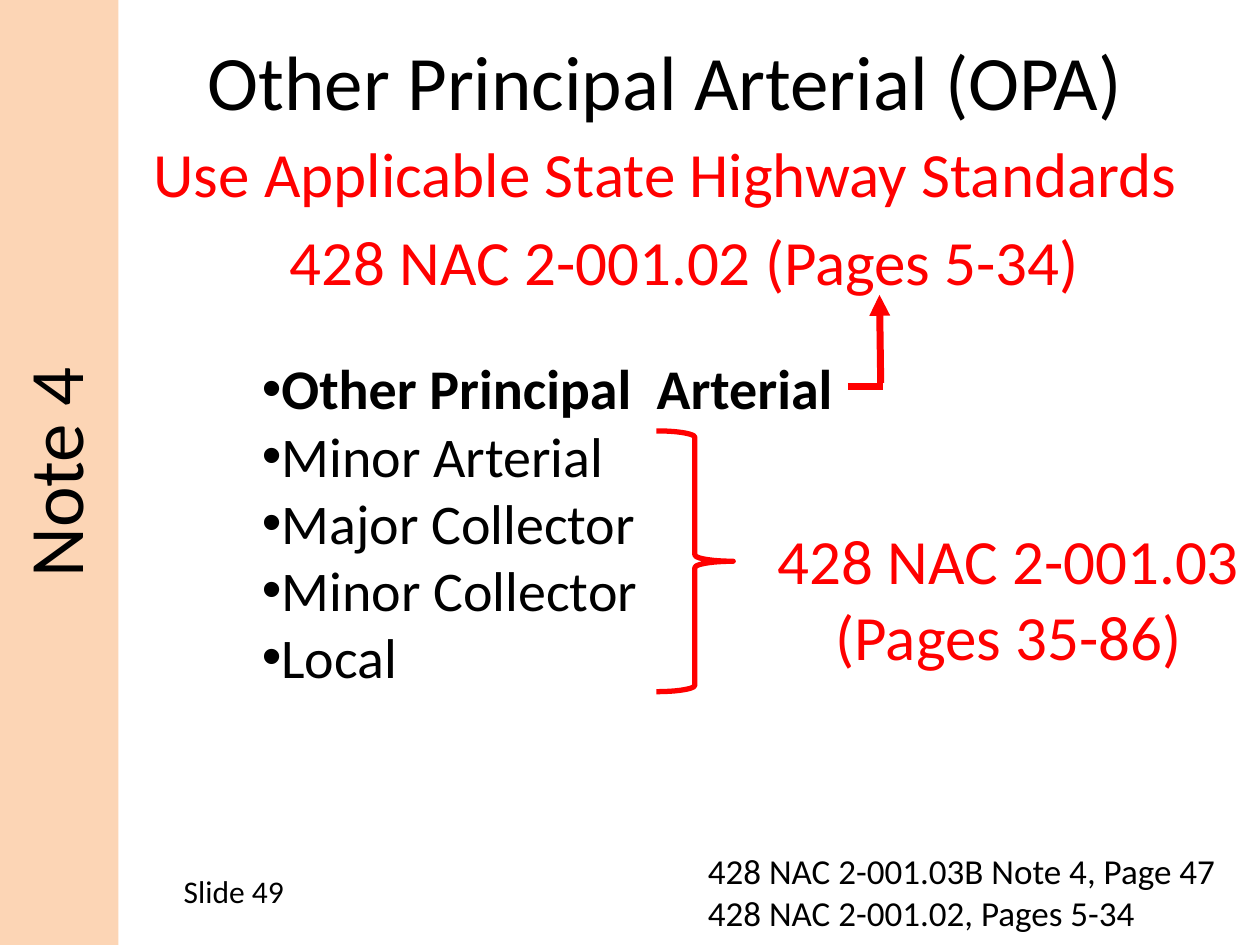
from lxml.etree import SubElement
from pptx import Presentation
from pptx.dml.color import RGBColor
from pptx.enum.shapes import MSO_CONNECTOR, MSO_SHAPE
from pptx.enum.text import MSO_ANCHOR, PP_ALIGN
from pptx.oxml.ns import qn
from pptx.util import Inches, Pt

BLACK = RGBColor(0x00, 0x00, 0x00)
RED = RGBColor(0xFF, 0x00, 0x00)
PEACH = RGBColor(0xFC, 0xD5, 0xB5)
LEFT, CENTER = PP_ALIGN.LEFT, PP_ALIGN.CENTER


def write_lines(frame, lines, size, color, align=LEFT, space_before=0):
    frame.word_wrap = True
    for index, line in enumerate(lines):
        paragraph = frame.paragraphs[0] if index == 0 else frame.add_paragraph()
        paragraph.alignment = align
        paragraph.space_before = Pt(space_before)
        run = paragraph.add_run()
        run.text = line
        run.font.name = "Calibri"
        run.font.size = Pt(size)
        run.font.color.rgb = color
    return frame.paragraphs


def add_text(box, lines, size, color, align=LEFT, space_before=0):
    text_box = slide.shapes.add_textbox(*map(Inches, box))
    return write_lines(text_box.text_frame, lines, size, color, align, space_before)


presentation = Presentation()
presentation.slide_width = Inches(10)
presentation.slide_height = Inches(7.5)
slide = presentation.slides.add_slide(presentation.slide_layouts[5])

title = slide.shapes.title
title.left, title.top = Inches(0.94), Inches(0)
title.width, title.height = Inches(8.82), Inches(1.26)
title.text_frame.vertical_anchor = MSO_ANCHOR.MIDDLE
write_lines(title.text_frame, ["Other Principal Arterial (OPA) "], 44, BLACK, CENTER)

subtitle = add_text(
    (1.12, 1.02, 8.63, 1.44),
    ["Use Applicable State Highway Standards", "428 NAC 2-001.02 (Pages 5-34)"],
    36, RED, space_before=7.2,
)
subtitle[1].alignment = CENTER

add_text(
    (5.52, 6.69, 4.48, 0.77),
    ["428 NAC 2-001.03B Note 4, Page 47", "428 NAC 2-001.02, Pages 5-34"],
    20, BLACK,
)

side_band = slide.shapes.add_shape(
    MSO_SHAPE.RECTANGLE, Inches(0), Inches(0), Inches(0.94), Inches(7.5)
)
side_band.shadow.inherit = False
side_band.fill.solid()
side_band.fill.fore_color.rgb = PEACH
side_band.line.fill.background()
write_lines(side_band.text_frame, ["Note 4"], 44, BLACK, CENTER)
side_band.text_frame.vertical_anchor = MSO_ANCHOR.TOP
side_band.text_frame._txBody.bodyPr.set("vert", "vert270")

add_text((1.36, 6.87, 1.24, 0.4), ["Slide 49"], 18, BLACK)

road_classes = add_text(
    (1.98, 2.76, 4.99, 2.79),
    ["Other Principal  Arterial", "Minor Arterial", "Major Collector",
     "Minor Collector", "Local"],
    32, BLACK,
)
road_classes[0].runs[0].font.bold = True
for paragraph in road_classes:
    properties = paragraph._p.get_or_add_pPr()
    SubElement(properties, qn("a:buFont"), typeface="Arial")
    SubElement(properties, qn("a:buChar"), char="•")

add_text((6.01, 4.09, 3.99, 1.31), ["428 NAC 2-001.03", "(Pages 35-86)"], 36, RED, CENTER)

brace = slide.shapes.add_shape(
    MSO_SHAPE.RIGHT_BRACE, Inches(5.21), Inches(3.42), Inches(0.61), Inches(2.07)
)
brace.shadow.inherit = False
brace.fill.background()
brace.line.color.rgb = RED
brace.line.width = Pt(3)

for ends, has_arrow in [((6.99, 3.04, 6.98, 2.34), True), ((6.73, 3.07, 7.01, 3.07), False)]:
    connector = slide.shapes.add_connector(MSO_CONNECTOR.STRAIGHT, *map(Inches, ends))
    connector.line.color.rgb = RED
    connector.line.width = Pt(4)
    if has_arrow:
        SubElement(connector.line._get_or_add_ln(), qn("a:tailEnd"), type="triangle")
    SubElement(connector._element.spPr, qn("a:effectLst"))

presentation.save("out.pptx")
